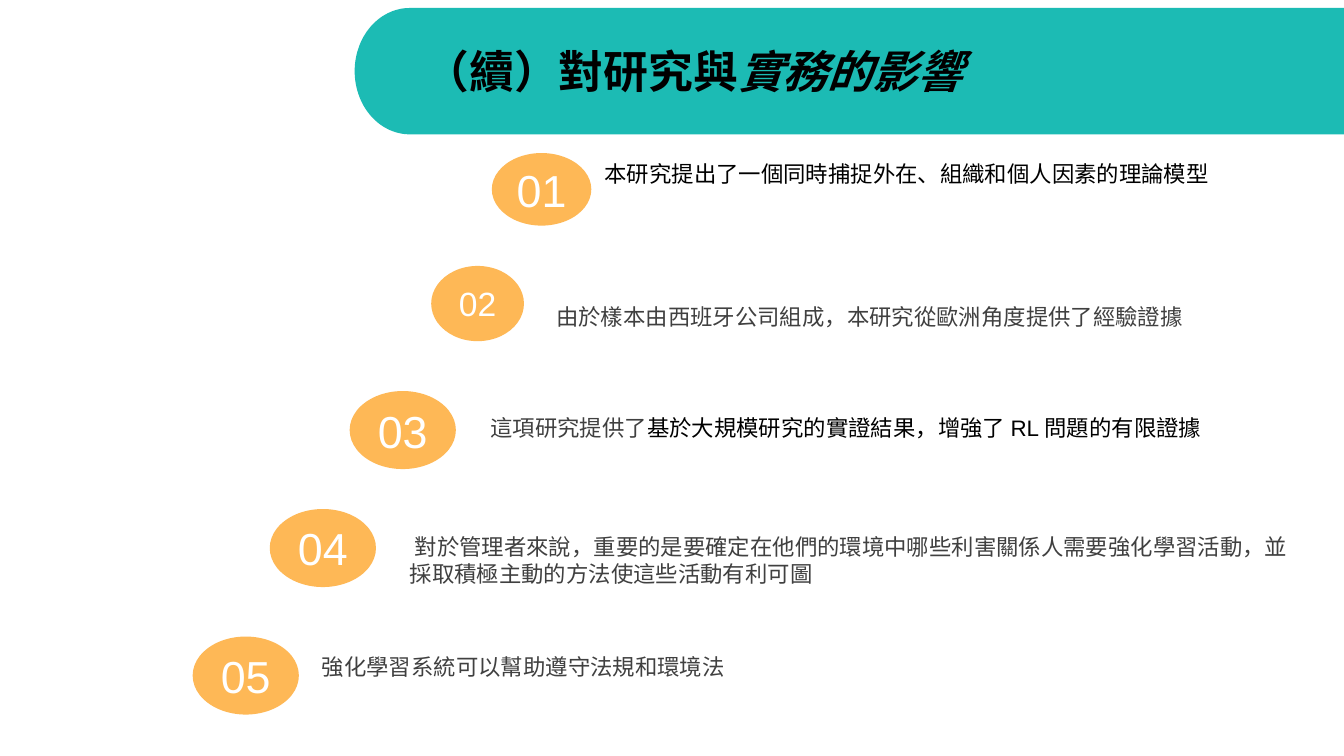
import math
from pptx import Presentation
from pptx.dml import color
from pptx.enum import shapes, text
from pptx.util import Pt

TEAL, ORANGE = "1CBBB4", "FEB856"
BLACK, GREY, WHITE = "000000", "404040", "FFFFFF"
MIDDLE, TOP = text.MSO_ANCHOR.MIDDLE, text.MSO_ANCHOR.TOP

# Per item: (badge box, number size), (text box, anchor), runs of (wording, colour)
ITEMS = [
    (((263.5, 82, 53.3, 38.9), 24), ((316.8, 82, 397.4, 36), TOP),
     [("本研究提出了一個同時捕捉外在、組織和個人因素的理論模型", BLACK)]),
    (((231, 142.5, 49.7, 40.3), 18), ((290.9, 151.2, 407.5, 36.7), MIDDLE),
     [("由於樣本由西班牙公司組成，本研究從歐洲角度提供了經驗證據", GREY)]),
    (((187.3, 209.5, 56.9, 41.8), 24), ((255.6, 218.2, 450, 51), TOP),
     [("這項研究提供了", GREY),
      ("基於大規模研究的實證結果，增強了 RL 問題的有限證據", BLACK)]),
    (((144.5, 272.7, 56.9, 41.8), 24), ((212.4, 281.5, 486.7, 36.7), MIDDLE),
     [(" 對於管理者來說，重要的是要確定在他們的環境中哪些利害關係人需要強化學習活動，"
       "並採取積極主動的方法使這些活動有利可圖", GREY)]),
    (((103.2, 341, 56.9, 41.8), 24), ((162.7, 346.3, 545, 21.6), MIDDLE),
     [(" 強化學習系統可以幫助遵守法規和環境法", GREY)]),
]


def rgb(value):
    return color.RGBColor.from_string(value)


def set_all(target, values):
    for name, value in values.items():
        setattr(target, name, value)


def add_run(paragraph, wording, hue, size, **values):
    run = paragraph.add_run()
    run.text = wording
    set_all(run.font, {"name": "Arial", "size": Pt(size), **values})
    run.font.color.rgb = rgb(hue)


def paint(shape, hue):
    shape.shadow.inherit = False
    shape.fill.solid()
    shape.fill.fore_color.rgb = rgb(hue)
    shape.line.fill.background()


def add_banner(slide, left, top, width, height):
    """Band with an elliptical left end, carrying the slide title."""
    bulge, half = 29.5, height / 2
    arc = [(left + bulge * (1 - math.sin(a)), top + half * (1 - math.cos(a)))
           for a in (math.pi * step / 60 for step in range(61))]
    right = left + width
    outline = [*arc, (right, top + height), (right, top)]
    points = [(Pt(x), Pt(y)) for x, y in outline]
    builder = slide.shapes.build_freeform(*points[0])
    builder.add_line_segments(points[1:], close=True)
    band = builder.convert_to_shape()
    paint(band, TEAL)

    title = slide.shapes.title
    band.element.addnext(title.element)
    set_all(title, {"left": Pt(left + 30.2), "top": Pt(top + 10.8),
                    "width": Pt(width - 30.2), "height": Pt(45.4)})
    title.text_frame.vertical_anchor = MIDDLE
    heading = title.text_frame.paragraphs[0]
    heading.alignment = text.PP_ALIGN.LEFT
    for wording, italic in (("（續）對研究與", False), ("實務的影響", True)):
        add_run(heading, wording, BLACK, 24, name="Roboto Condensed",
                bold=True, italic=italic)


def add_badge(slide, number, box, size):
    badge = slide.shapes.add_shape(shapes.MSO_SHAPE.OVAL, *map(Pt, box))
    paint(badge, ORANGE)
    frame = badge.text_frame
    set_all(frame, {"word_wrap": False, "vertical_anchor": MIDDLE,
                    "margin_left": 0, "margin_right": 0,
                    "margin_top": 0, "margin_bottom": 0})
    paragraph = frame.paragraphs[0]
    paragraph.alignment = text.PP_ALIGN.CENTER
    add_run(paragraph, f"{number:02}", WHITE, size)


def add_statement(slide, box, anchor, runs):
    frame = slide.shapes.add_textbox(*map(Pt, box)).text_frame
    set_all(frame, {"word_wrap": True, "vertical_anchor": anchor})
    for wording, hue in runs:
        add_run(frame.paragraphs[0], wording, hue, 12)


def main():
    deck = Presentation()
    set_all(deck, {"slide_width": Pt(720), "slide_height": Pt(405)})
    slide = deck.slides.add_slide(deck.slide_layouts.get_by_name("Title Only"))
    add_banner(slide, 190, 4.3, 530, 67.7)
    for number, (badge, statement, runs) in enumerate(ITEMS, start=1):
        add_badge(slide, number, *badge)
        add_statement(slide, *statement, runs)
    deck.save("out.pptx")


if __name__ == "__main__":
    main()
